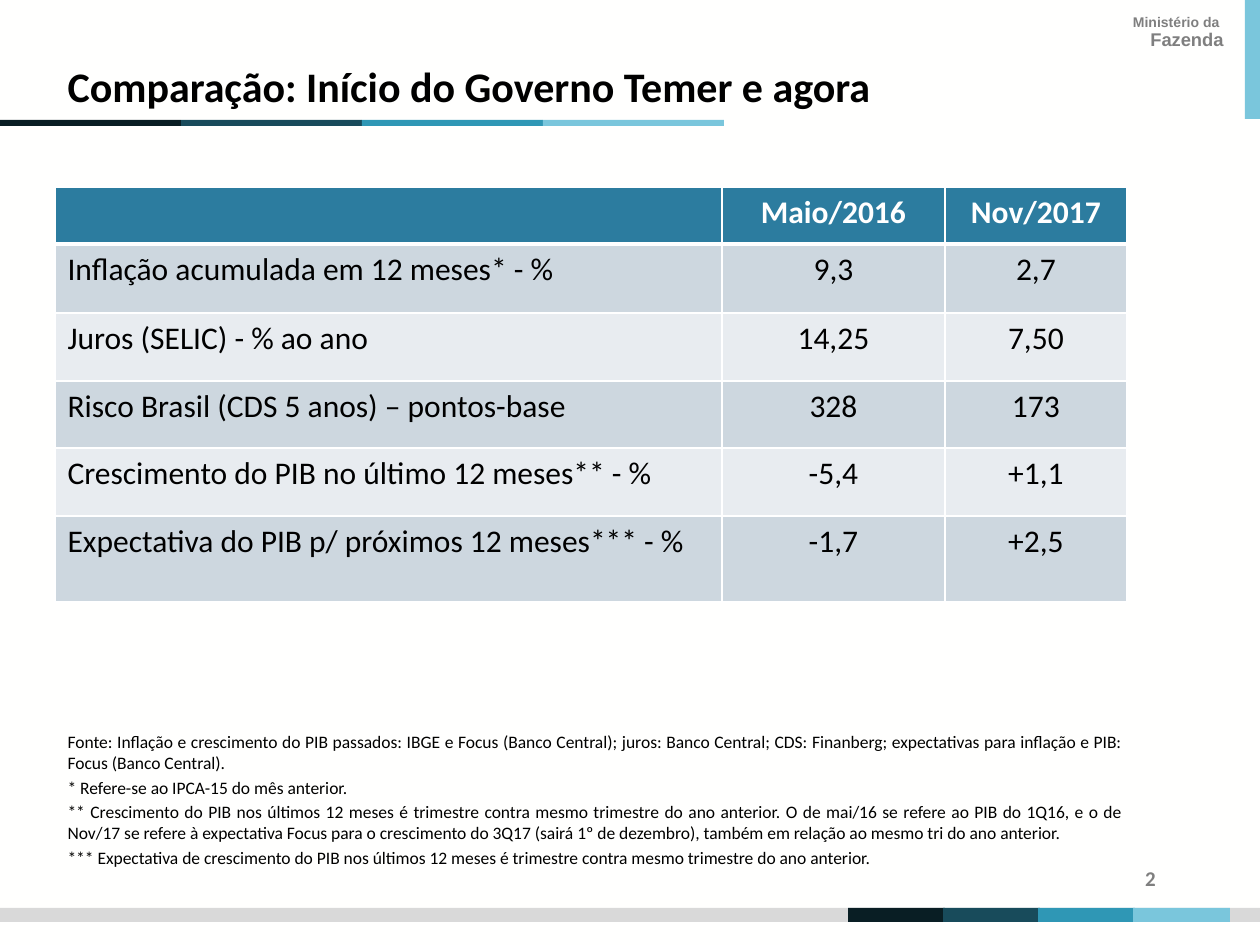
from dataclasses import dataclass

from lxml import etree
from pptx import Presentation
from pptx.dml.color import RGBColor
from pptx.enum import shapes, text
from pptx.oxml import ns
from pptx.util import Emu, Pt

EMU_PER_PX = 914400 / 126

PAPER = RGBColor(0xFF, 0xFF, 0xFE)
WHITE = RGBColor(0xFF, 0xFF, 0xFF)
BLACK = RGBColor(0x00, 0x00, 0x00)
GREY = RGBColor(0x7F, 0x7F, 0x7F)
PALE_GREY = RGBColor(0xD9, 0xD9, 0xD9)
HEADER = RGBColor(0x2C, 0x7C, 0x9F)
BANDS = (RGBColor(0xE8, 0xEC, 0xF0), RGBColor(0xCD, 0xD7, 0xDF))
SKY = RGBColor(0x7A, 0xC6, 0xDC)
STRIPE_COLORS = (
    RGBColor(0x09, 0x1E, 0x24),
    RGBColor(0x18, 0x4B, 0x5B),
    RGBColor(0x2F, 0x97, 0xB5),
    SKY,
)

COLUMN_WIDTHS = (667, 223, 182)
ROW_HEIGHTS = (57, 69, 68, 67, 68, 86)
ROWS = (
    ("", "Maio/2016", "Nov/2017"),
    ("Inflação acumulada em 12 meses* - %", "9,3", "2,7"),
    ("Juros (SELIC) - % ao ano", "14,25", "7,50"),
    ("Risco Brasil (CDS 5 anos) – pontos-base", "328", "173"),
    ("Crescimento do PIB no último 12 meses** - %", "-5,4", "+1,1"),
    ("Expectativa do PIB p/ próximos 12 meses*** - %", "-1,7", "+2,5"),
)
NOTES = (
    "Fonte: Inflação e crescimento do PIB passados: IBGE e Focus (Banco Central); "
    "juros: Banco Central; CDS: Finanberg; expectativas para inflação e PIB: "
    "Focus (Banco Central).",
    "* Refere-se ao IPCA-15 do mês anterior.",
    "** Crescimento do PIB nos últimos 12 meses é trimestre contra mesmo trimestre "
    "do ano anterior. O de mai/16 se refere ao PIB do 1Q16, e o de Nov/17 se refere "
    "à expectativa Focus para o crescimento do 3Q17 (sairá 1º de dezembro), também "
    "em relação ao mesmo tri do ano anterior.",
    "*** Expectativa de crescimento do PIB nos últimos 12 meses é trimestre contra "
    "mesmo trimestre do ano anterior.",
)


@dataclass(frozen=True)
class Area:
    left: int
    top: int
    width: int
    height: int

    def emu(self) -> tuple[Emu, ...]:
        return tuple(px(n) for n in (self.left, self.top, self.width, self.height))


@dataclass(frozen=True)
class Style:
    size: float
    color: RGBColor
    bold: bool = False
    align: text.PP_ALIGN = text.PP_ALIGN.LEFT
    font: str = "Calibri"


@dataclass(frozen=True)
class Stripe:
    first: Area
    step: int


STRIPES = (
    Stripe(Area(848, 908, 97, 14), 95),
    Stripe(Area(0, 120, 181, 6), 181),
)


def px(length: int) -> Emu:
    return Emu(round(length * EMU_PER_PX))


def format_paragraph(para, style: Style) -> None:
    para.alignment = style.align
    for span in para.runs:
        span.font.name = style.font
        span.font.size = Pt(style.size)
        span.font.bold = style.bold
        span.font.color.rgb = style.color


def place(box, area: Area) -> None:
    box.left, box.top, box.width, box.height = area.emu()


def write(box, lines: tuple[str, ...], styles: tuple[Style, ...],
          anchor: text.MSO_ANCHOR) -> None:
    frame = box.text_frame
    frame.text = "\n".join(lines)
    frame.word_wrap = True
    frame.auto_size = text.MSO_AUTO_SIZE.NONE
    frame.vertical_anchor = anchor
    for para, style in zip(frame.paragraphs, styles):
        format_paragraph(para, style)


def add_bar(page, area: Area, color: RGBColor) -> None:
    bar = page.shapes.add_shape(shapes.MSO_SHAPE.RECTANGLE, *area.emu())
    bar.shadow.inherit = False
    bar.fill.solid()
    bar.fill.fore_color.rgb = color
    bar.line.fill.background()


def add_stripe(page, stripe: Stripe) -> None:
    first = stripe.first
    for index, color in enumerate(STRIPE_COLORS):
        left = first.left + index * stripe.step
        add_bar(page, Area(left, first.top, first.width, first.height), color)


def set_borders(cell, row: int) -> None:
    properties = cell._tc.get_or_add_tcPr()
    widths = {"L": 1, "R": 1, "T": 3 if row == 1 else 1, "B": 3 if row == 0 else 1}
    for side, width in widths.items():
        line = etree.SubElement(properties, ns.qn(f"a:ln{side}"), w=str(Pt(width)))
        fill = etree.SubElement(line, ns.qn("a:solidFill"))
        etree.SubElement(fill, ns.qn("a:srgbClr"), val=str(WHITE))


def add_comparison_table(page, left: int, top: int) -> None:
    area = Area(left, top, sum(COLUMN_WIDTHS), sum(ROW_HEIGHTS))
    table = page.shapes.add_table(len(ROWS), len(COLUMN_WIDTHS), *area.emu()).table
    for column, width in zip(table.columns, COLUMN_WIDTHS):
        column.width = px(width)
    for row, (values, height) in enumerate(zip(ROWS, ROW_HEIGHTS)):
        table.rows[row].height = px(height)
        is_header = row == 0
        for column, value in enumerate(values):
            cell = table.cell(row, column)
            set_borders(cell, row)
            cell.fill.solid()
            cell.fill.fore_color.rgb = HEADER if is_header else BANDS[row % 2]
            cell.text_frame.text = value
            align = text.PP_ALIGN.CENTER if column else text.PP_ALIGN.LEFT
            color = WHITE if is_header else BLACK
            format_paragraph(cell.text_frame.paragraphs[0],
                             Style(18, color, is_header, align))


def fill_notes(box) -> None:
    place(box, Area(55, 725, 1079, 170))
    style = Style(10, BLACK, align=text.PP_ALIGN.JUSTIFY)
    write(box, NOTES, (style,) * len(NOTES), text.MSO_ANCHOR.TOP)
    for para in box.text_frame.paragraphs:
        para.space_before = Pt(2)
        properties = para._p.get_or_add_pPr()
        properties.set("marL", "0")
        properties.set("indent", "0")
        etree.SubElement(properties, ns.qn("a:buNone"))


def add_ministry_name(page) -> None:
    box = page.shapes.add_textbox(*Area(1090, 9, 146, 48).emu())
    styles = tuple(Style(size, GREY, True, text.PP_ALIGN.RIGHT, "Arial")
                   for size in (8, 10.5))
    write(box, ("Ministério da ", "Fazenda"), styles, text.MSO_ANCHOR.TOP)
    for para in box.text_frame.paragraphs:
        para.line_spacing = 0.9


def add_page_number(page) -> None:
    box = page.shapes.add_textbox(*Area(1113, 853, 75, 50).emu())
    write(box, ("2",), (Style(12, GREY, True, text.PP_ALIGN.CENTER),),
          text.MSO_ANCHOR.MIDDLE)


def main() -> None:
    deck = Presentation()
    deck.slide_width, deck.slide_height = px(1260), px(945)
    page = deck.slides.add_slide(deck.slide_layouts[1])
    page.background.fill.solid()
    page.background.fill.fore_color.rgb = PAPER

    add_bar(page, Area(0, 908, 1260, 14), PALE_GREY)
    add_bar(page, Area(1245, 0, 15, 119), SKY)
    for stripe in STRIPES:
        add_stripe(page, stripe)
    add_ministry_name(page)
    add_page_number(page)

    title, notes = page.placeholders
    place(title, Area(55, 40, 1072, 77))
    write(title, ("Comparação: Início do Governo Temer e agora",),
          (Style(24, BLACK, True),), text.MSO_ANCHOR.BOTTOM)
    add_comparison_table(page, 55, 187)
    fill_notes(notes)
    deck.save("out.pptx")


if __name__ == "__main__":
    main()
